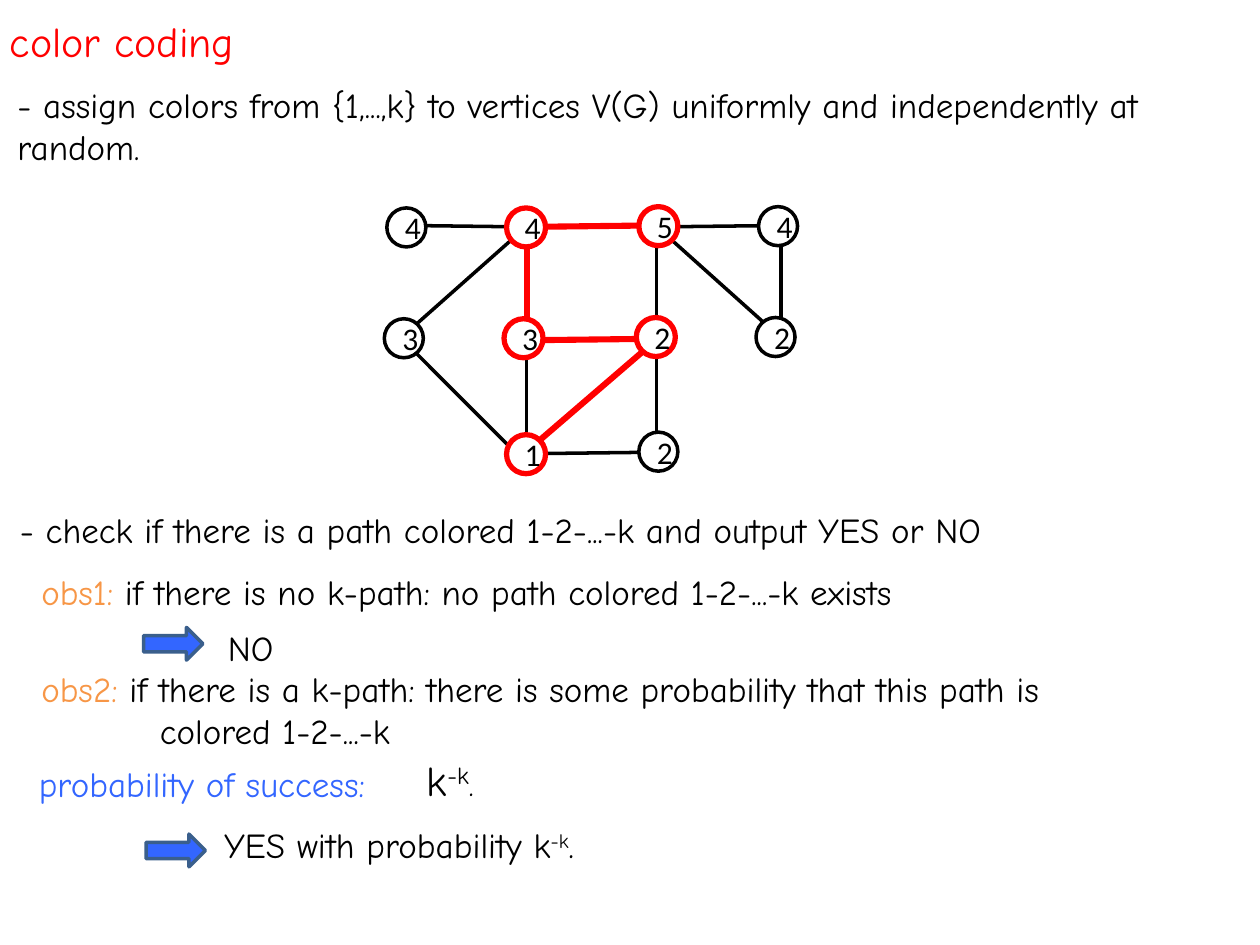
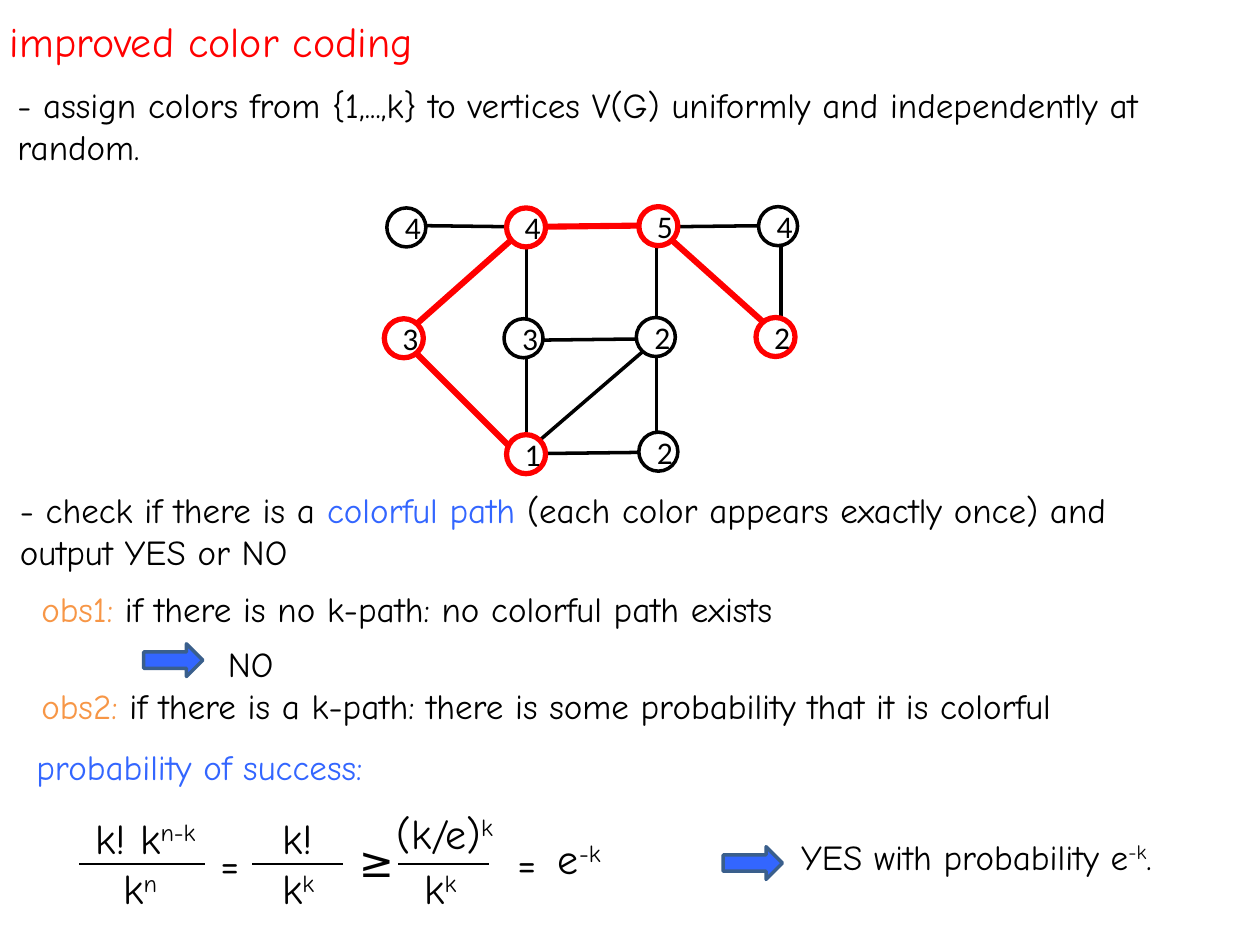
from lxml.etree import SubElement
from pptx import Presentation
from pptx.dml.color import RGBColor
from pptx.enum.shapes import MSO_CONNECTOR, MSO_SHAPE
from pptx.enum.text import MSO_ANCHOR, MSO_AUTO_SIZE, PP_ALIGN
from pptx.oxml.ns import qn
from pptx.util import Inches, Pt

COLORS = {
    "text": "000000",
    "paper": "FFFFFF",
    "red": "FF0000",
    "blue": "3366FF",
    "orange": "F79646",
    "arrow_line": "3A5F8C",
}
TEXT_FONT, VERTEX_FONT = "Comic Neue", "Calibri"
BODY_SIZE, LARGE_SIZE, VERTEX_SIZE = 20, 24, 18
BODY_HEIGHT, TWO_LINE_HEIGHT, LARGE_HEIGHT = 0.44, 0.77, 0.5
VERTEX_DIAMETER = 0.31
ARROW_WIDTH, ARROW_HEIGHT = 0.47, 0.26

BLUE = {"color": "blue"}
ORANGE = {"color": "orange"}
SUPERSCRIPT = {"superscript": True}

ASSIGN_TEXT = ("- assign colors from {1,...,k} to vertices V(G) "
               "uniformly and independently at random.")

# vertex: (left, top, color number)
VERTICES = {
    "a": (3.07, 1.65, 4), "b": (4.02, 1.65, 4), "c": (5.07, 1.64, 5), "d": (6.02, 1.64, 4),
    "e": (3.05, 2.53, 3), "f": (4.00, 2.53, 3), "g": (5.05, 2.52, 2), "h": (6.00, 2.52, 2),
    "i": (4.02, 3.45, 1), "j": (5.07, 3.43, 2),
}
# pair of vertices: (start x, start y, end x, end y)
EDGES = {
    "ab": (3.27, 1.79, 4.10, 1.80),
    "fb": (4.18, 2.61, 4.18, 1.88),
    "ei": (3.24, 2.74, 4.10, 3.60),
    "be": (4.12, 1.85, 3.24, 2.63),
    "bc": (4.26, 1.80, 5.13, 1.79),
    "cd": (5.29, 1.80, 6.17, 1.79),
    "if": (4.18, 3.52, 4.18, 2.78),
    "gc": (5.21, 2.63, 5.21, 1.89),
    "jg": (5.21, 3.51, 5.21, 2.80),
    "ij": (4.26, 3.60, 5.13, 3.59),
    "fg": (4.23, 2.70, 5.11, 2.69),
    "ig": (4.23, 3.54, 5.16, 2.74),
    "ch": (5.27, 1.85, 6.14, 2.63),
    "hd": (6.20, 2.63, 6.20, 1.87),
}

# texts: (left, top, width, height, runs, box format)
SLIDES = [
    {
        "title": "color coding",
        "path": "igfbc",
        "observations_top": 4.48,
        "texts": [
            (0.06, 3.99, 9.64, BODY_HEIGHT,
             [("- check if there is a path colored 1-2-...-k and output YES or NO", {})], {}),
            (0.23, 5.25, 9.49, TWO_LINE_HEIGHT,
             [("obs2: ", ORANGE),
              ("if there is a k-path: there is some probability that this path is", {}),
              ("\n", {}),
              ("colored 1-2-...-k", {})], {"hanging": 0.94}),
            (0.21, 6.0, 3.18, BODY_HEIGHT, [("probability of success:", BLUE)], {}),
            (3.29, 5.94, 0.71, LARGE_HEIGHT,
             [("k", {}), ("-k", SUPERSCRIPT), (".", {"size": 18})], {"size": LARGE_SIZE}),
        ],
        "no_path": "if there is no k-path: no path colored 1-2-...-k exists",
        "answer": (1.68, 6.49, "YES with probability k"),
        "answer_arrow": (1.16, 6.62),
        "formula": [],
        "fraction_bars": [],
    },
    {
        "title": "improved color coding",
        "path": "iebch",
        "observations_top": 4.61,
        "texts": [
            (0.06, 3.83, 9.64, TWO_LINE_HEIGHT,
             [("- check if there is a ", {}), ("colorful path", BLUE),
              (" (each color appears exactly once) and output YES or NO", {})], {}),
            (0.23, 5.38, 9.49, BODY_HEIGHT,
             [("obs2: ", ORANGE),
              ("if there is a k-path: there is some probability that it is colorful", {})], {}),
            (0.19, 5.87, 3.18, BODY_HEIGHT, [("probability of success:", BLUE)], {}),
        ],
        "no_path": "if there is no k-path: no colorful path exists",
        "answer": (6.26, 6.58, "YES with probability e"),
        "answer_arrow": (5.74, 6.72),
        # (left, top, width, base, exponent)
        "formula": [
            (0.66, 6.40, 1.12, "k! k", "n-k"), (0.88, 6.80, 0.53, "k", "n"),
            (1.65, 6.60, 0.35, "=", ""),
            (2.14, 6.40, 0.53, "k!", ""), (2.14, 6.80, 0.53, "k", "k"),
            (2.75, 6.58, 0.35, "≥", ""),
            (3.05, 6.36, 1.34, "(k/e)", "k"), (3.27, 6.80, 0.53, "k", "k"),
            (4.01, 6.59, 0.35, "=", ""), (4.33, 6.56, 0.81, "e", "-k"),
        ],
        "fraction_bars": [(0.63, 1.63), (2.0, 2.72), (3.16, 3.88)],
    },
]
FRACTION_BAR_TOP = 6.86


def rgb(name):
    return RGBColor.from_string(COLORS[name])


def write_run(paragraph, text, size=BODY_SIZE, color="text", font=TEXT_FONT, superscript=False):
    run = paragraph.add_run()
    run.text = text
    run.font.size = Pt(size)
    run.font.name = font
    run.font.color.rgb = rgb(color)
    if superscript:
        run.font._element.set("baseline", "30000")


def add_text(slide, left, top, width, height, runs, size=BODY_SIZE, grow=True,
             space_before=0, hanging=0):
    """Add a text box; runs are (text, format) pairs and "\\n" breaks the line."""
    box = slide.shapes.add_textbox(Inches(left), Inches(top), Inches(width), Inches(height))
    frame = box.text_frame
    frame.word_wrap = True
    frame.auto_size = MSO_AUTO_SIZE.SHAPE_TO_FIT_TEXT if grow else MSO_AUTO_SIZE.NONE
    paragraph = frame.paragraphs[0]
    if space_before:
        paragraph.space_before = Pt(space_before)
    if hanging:
        properties = paragraph._p.get_or_add_pPr()
        properties.set("marL", str(Inches(hanging)))
        properties.set("indent", str(-Inches(hanging)))
    for text, run_format in runs:
        if text == "\n":
            paragraph.add_line_break()
        else:
            write_run(paragraph, text, **{"size": size, **run_format})


def add_line(slide, start_x, start_y, end_x, end_y, color="text", weight=2):
    line = slide.shapes.add_connector(MSO_CONNECTOR.STRAIGHT, Inches(start_x), Inches(start_y),
                                      Inches(end_x), Inches(end_y))
    line.line.color.rgb = rgb(color)
    line.line.width = Pt(weight)
    SubElement(line._element.spPr, qn("a:effectLst"))


def add_filled_shape(slide, preset, left, top, width, height, fill, line, weight=2):
    shape = slide.shapes.add_shape(preset, Inches(left), Inches(top),
                                   Inches(width), Inches(height))
    shape.shadow.inherit = False
    shape.fill.solid()
    shape.fill.fore_color.rgb = rgb(fill)
    shape.line.color.rgb = rgb(line)
    shape.line.width = Pt(weight)
    return shape


def add_arrow(slide, left, top):
    add_filled_shape(slide, MSO_SHAPE.RIGHT_ARROW, left, top, ARROW_WIDTH, ARROW_HEIGHT,
                     "blue", "arrow_line")


def add_graph(slide, path):
    """Draw the graph with the vertices and edges of the path in red."""
    path_edges = {frozenset(pair) for pair in zip(path, path[1:])}
    for pair, ends in EDGES.items():
        if frozenset(pair) in path_edges:
            add_line(slide, *ends, color="red", weight=3.5)
        else:
            add_line(slide, *ends)
    for name, (left, top, number) in VERTICES.items():
        line, weight = ("red", 3) if name in path else ("text", 2)
        vertex = add_filled_shape(slide, MSO_SHAPE.OVAL, left, top, VERTEX_DIAMETER,
                                  VERTEX_DIAMETER, "paper", line, weight)
        vertex.text_frame.vertical_anchor = MSO_ANCHOR.MIDDLE
        paragraph = vertex.text_frame.paragraphs[0]
        paragraph.alignment = PP_ALIGN.CENTER
        write_run(paragraph, str(number), size=VERTEX_SIZE, font=VERTEX_FONT)


def build_slide(presentation, content):
    slide = presentation.slides.add_slide(presentation.slide_layouts[6])
    add_text(slide, -0.02, 0.07, 6.42, 0.49, [(content["title"], {"color": "red"})],
             size=LARGE_SIZE, grow=False, space_before=4.8)
    add_text(slide, 0.04, 0.61, 9.69, TWO_LINE_HEIGHT, [(ASSIGN_TEXT, {})])
    add_graph(slide, content["path"])

    top = content["observations_top"]
    add_text(slide, 0.23, top, 8.7, BODY_HEIGHT, [("obs1: ", ORANGE), (content["no_path"], {})])
    add_text(slide, 1.71, top + 0.44, 1.65, BODY_HEIGHT, [("NO", {})])
    add_arrow(slide, 1.14, top + 0.5)
    for *place, runs, box_format in content["texts"]:
        add_text(slide, *place, runs, **box_format)

    for left, top, width, base, exponent in content["formula"]:
        runs = [(base, {})] + ([(exponent, SUPERSCRIPT)] if exponent else [])
        add_text(slide, left, top, width, LARGE_HEIGHT, runs, size=LARGE_SIZE)
    for start, end in content["fraction_bars"]:
        add_line(slide, start, FRACTION_BAR_TOP, end, FRACTION_BAR_TOP, weight=1.25)

    left, top, answer = content["answer"]
    add_text(slide, left, top, 3.63, BODY_HEIGHT,
             [(answer, {}), ("-k", SUPERSCRIPT), (".", {})])
    add_arrow(slide, *content["answer_arrow"])


def main():
    presentation = Presentation()
    presentation.slide_width = Inches(10)
    presentation.slide_height = Inches(7.5)
    for content in SLIDES:
        build_slide(presentation, content)
    presentation.save("out.pptx")


if __name__ == "__main__":
    main()
